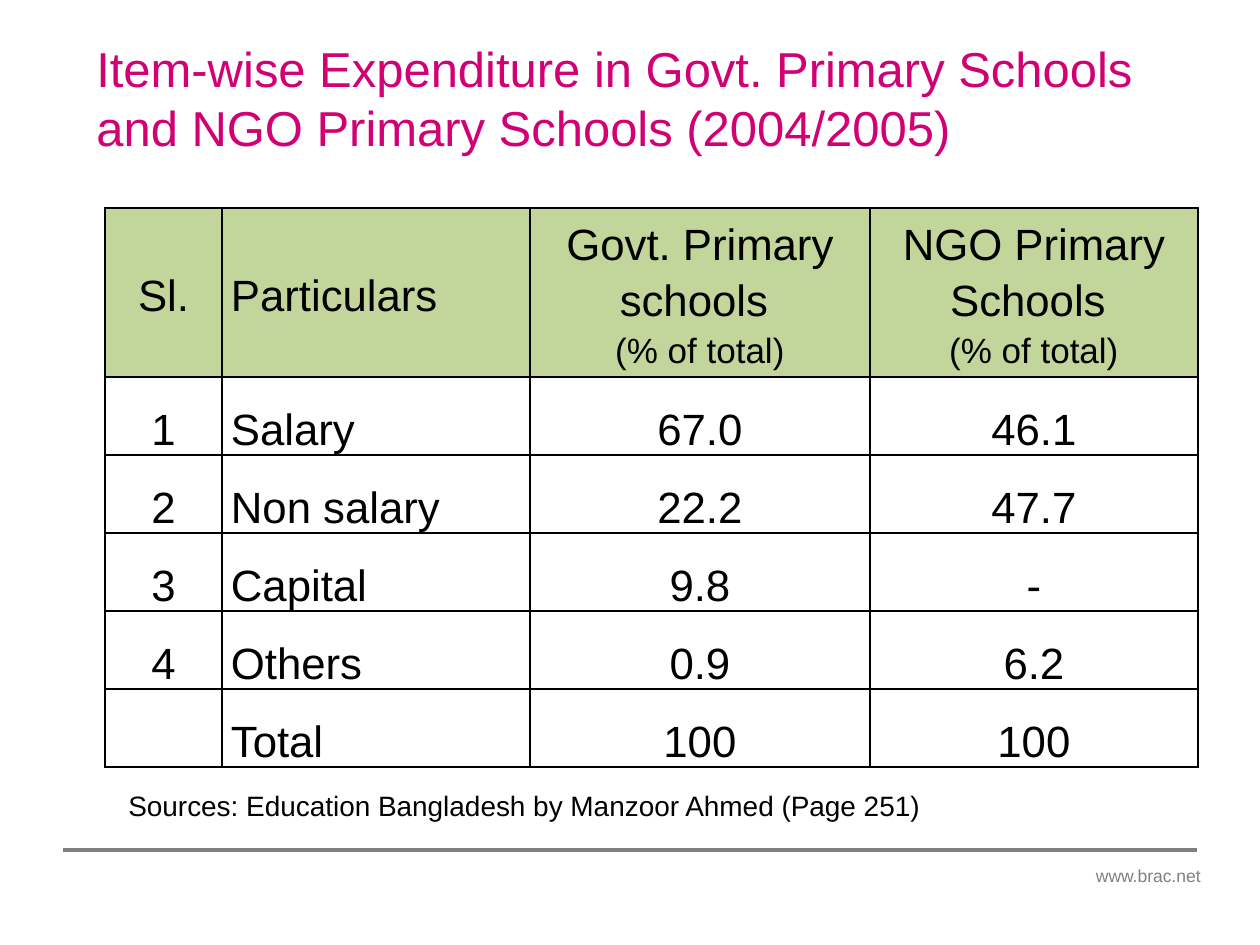
from dataclasses import dataclass

from lxml.etree import SubElement as Sub
from pptx import Presentation
from pptx.dml.color import RGBColor as Rgb
from pptx.enum.shapes import MSO_CONNECTOR as Conn
from pptx.enum.text import MSO_ANCHOR as Anchor, PP_ALIGN as Align
from pptx.oxml.ns import qn
from pptx.util import Emu, Pt


@dataclass(frozen=True)
class Theme:
    font: str = "Arial"
    pink: str = "D10074"
    ink: str = "000000"
    gray: str = "808080"
    green: str = "C2D69B"
    white: str = "FFFFFF"
    title: int = 28
    body: int = 25
    unit: int = 20
    note: int = 16
    link: int = 10


THEME = Theme()
COLS = (117, 42, 266, 340, 328)
ROWS = (61, 169, 78, 78, 78, 78, 78)
UNIT = "(% of total)"
HEAD = ("Sl.", "Particulars",
        f"Govt. Primary schools \n{UNIT}", f"NGO Primary Schools \n{UNIT}")
ITEMS = (
    ("1", "Salary", "67.0", "46.1"),
    ("2", "Non salary", "22.2", "47.7"),
    ("3", "Capital", "9.8", "-"),
    ("4", "Others", "0.9", "6.2"),
    ("", "Total", "100", "100"),
)


def px(n):
    """Turn slide pixels, 126 to the inch, into EMU."""
    return Emu(round(n * 914400 / 126))


def put(obj, form):
    for key, val in form.items():
        setattr(obj, key, val)


def style(para, size, color, **form):
    put(para, form)
    put(para.font, {"name": THEME.font, "size": Pt(size)})
    para.font.color.rgb = Rgb.from_string(color)


def label(slide, box, text, size, color, align=Align.LEFT):
    frame = slide.shapes.add_textbox(*map(px, box)).text_frame
    frame.word_wrap = True
    para = frame.paragraphs[0]
    para.text = text
    style(para, size, color, alignment=align)


def edge(cell, sides):
    """Draw the named sides (L, R, T, B) of a cell; call before its fill."""
    props = cell._tc.get_or_add_tcPr()
    for side in sides:
        line = Sub(props, qn(f"a:ln{side}"), w=str(Pt(1)))
        fill = Sub(line, qn("a:solidFill"))
        Sub(fill, qn("a:srgbClr"), val=THEME.ink)


def paint(cell, color):
    if color:
        cell.fill.solid()
        cell.fill.fore_color.rgb = Rgb.from_string(color)
    else:
        cell.fill.background()


def write(cell, text, align, anchor):
    put(cell, {"margin_left": px(9), "margin_right": px(9), "margin_top": 0,
               "margin_bottom": 0, "vertical_anchor": anchor})
    cell.text_frame.text = text
    for para in cell.text_frame.paragraphs:
        size = THEME.unit if para.text == UNIT else THEME.body
        style(para, size, THEME.ink, alignment=align, line_spacing=1.15)


def grid(slide, left, top):
    """Place the table; its first row is an unfilled spacer."""
    box = map(px, (left, top, sum(COLS), sum(ROWS)))
    table = slide.shapes.add_table(len(ROWS), len(COLS), *box).table
    put(table, {"first_row": False, "horz_banding": False})
    for col, wide in zip(table.columns, COLS):
        col.width = px(wide)
    for row, high in zip(table.rows, ROWS):
        row.height = px(high)

    for i in range(len(ROWS)):
        for j in range(len(COLS)):
            cell = table.cell(i, j)
            edge(cell, "LRTB" if i else "B")
            paint(cell, (None, THEME.green)[i] if i < 2 else THEME.white)
    table.cell(0, 0).merge(table.cell(0, 1))
    table.cell(0, 2).merge(table.cell(0, 4))

    for i, line in enumerate((HEAD, *ITEMS), 1):
        table.cell(i, 1).merge(table.cell(i, 2))
        anchor = Anchor.MIDDLE if i == 1 else Anchor.BOTTOM
        for j, text in zip((0, 1, 3, 4), line):
            align = Align.LEFT if j == 1 else Align.CENTER
            if text:
                write(table.cell(i, j), text, align, anchor)


def footer(slide, left, top, wide):
    ends = map(px, (left, top, left + wide, top))
    rule = slide.shapes.add_connector(Conn.STRAIGHT, *ends)
    rule.line.width = Pt(2)
    rule.line.color.rgb = Rgb.from_string(THEME.gray)
    Sub(rule._element.spPr, qn("a:effectLst"))
    label(slide, (left + wide - 136, top + 9, 152, 34), "www.brac.net",
          THEME.link, THEME.gray, Align.RIGHT)


def main():
    deck = Presentation()
    put(deck, {"slide_width": px(1260), "slide_height": px(945)})
    slide = deck.slides.add_slide(deck.slide_layouts[6])
    footer(slide, 63, 850, 1134)
    grid(slide, 105, 147)
    label(slide, (84, 32, 1124, 131),
          "Item-wise Expenditure in Govt. Primary Schools "
          "and NGO Primary Schools (2004/2005)", THEME.title, THEME.pink)
    label(slide, (116, 782, 1071, 47),
          "Sources: Education Bangladesh by Manzoor Ahmed (Page 251)",
          THEME.note, THEME.ink)
    deck.save("out.pptx")


if __name__ == "__main__":
    main()
